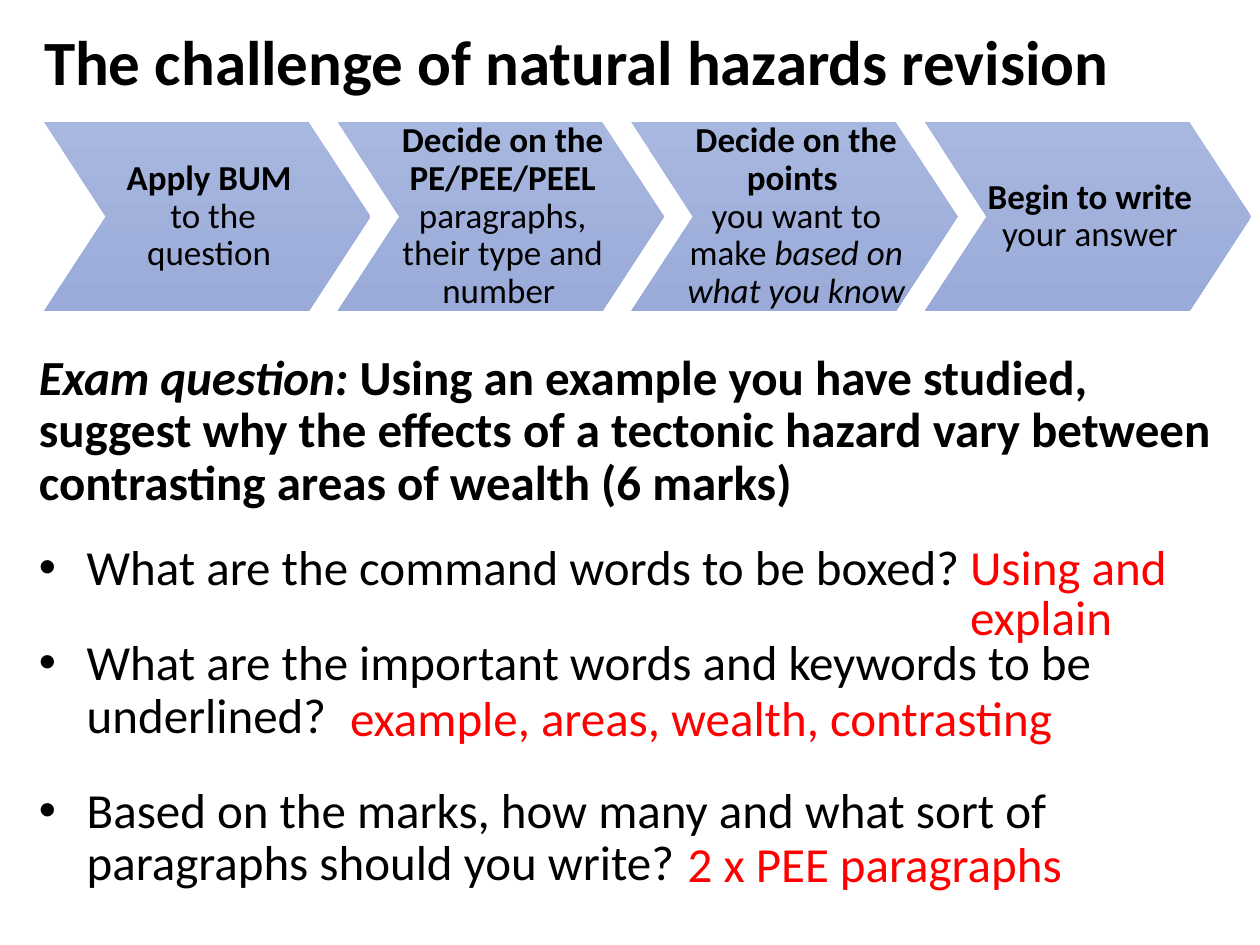
from lxml import etree
from pptx import Presentation
from pptx.dml.color import RGBColor
from pptx.enum.text import MSO_ANCHOR, MSO_AUTO_SIZE, PP_ALIGN
from pptx.oxml.ns import qn
from pptx.util import Inches, Pt

BLACK = RGBColor(0x00, 0x00, 0x00)
RED = RGBColor(0xFF, 0x00, 0x00)
BLUE_TOP = RGBColor(0xA8, 0xB7, 0xDF)
BLUE_BOTTOM = RGBColor(0x9A, 0xAB, 0xD9)

PLAIN = {"bold": False, "italic": False}
BOLD = {"bold": True, "italic": False}
ITALIC = {"bold": False, "italic": True}
BOLD_ITALIC = {"bold": True, "italic": True}


def set_frame(tf, **values):
    defaults = {"word_wrap": True, "auto_size": MSO_AUTO_SIZE.NONE}
    for name, value in {**defaults, **values}.items():
        setattr(tf, name, value)


def add_paragraph(tf, runs, size, color=BLACK, **values):
    p = tf.paragraphs[0] if not tf.paragraphs[0].runs else tf.add_paragraph()
    for name, value in values.items():
        setattr(p, name, value)
    for text, style in runs:
        r = p.add_run()
        r.text = text
        r.font.color.rgb = color
        for name, value in {"name": "Calibri", "size": Pt(size), **style}.items():
            setattr(r.font, name, value)
    return p


prs = Presentation()
prs.slide_width, prs.slide_height = Inches(10), Inches(7.5)
s = prs.slides.add_slide(prs.slide_layouts[5])

title = s.shapes.title
title.left, title.top = Inches(0.25), Inches(0.17)
title.width, title.height = Inches(9.5), Inches(0.67)
set_frame(title.text_frame, vertical_anchor=MSO_ANCHOR.BOTTOM)
add_paragraph(title.text_frame, [("The challenge of natural hazards revision", BOLD)], 36,
              alignment=PP_ALIGN.LEFT, line_spacing=0.9)

body = s.shapes.add_textbox(Inches(0.21), Inches(2.75), Inches(9.79), Inches(4.5))
set_frame(body.text_frame)
add_paragraph(body.text_frame, [
    ("Exam question: ", BOLD_ITALIC),
    ("Using an example you have studied, suggest why the effects of a tectonic hazard "
     "vary between contrasting areas of wealth (6 marks)", BOLD),
], 28, line_spacing=0.9, space_before=Pt(12), space_after=Pt(6))

questions = [
    "What are the command words to be boxed?",
    "What are the important words and keywords to be underlined?",
    "Based on the marks, how many and what sort of paragraphs should you write?",
]
for question in questions:
    p = add_paragraph(body.text_frame, [(question, PLAIN)], 28, line_spacing=0.9,
                      space_before=Pt(12), space_after=Pt(12))
    pPr = p._p.get_or_add_pPr()
    pPr.set("marL", str(Inches(0.38)))
    pPr.set("indent", str(-Inches(0.38)))
    etree.SubElement(pPr, qn("a:buFont")).set("typeface", "Arial")
    etree.SubElement(pPr, qn("a:buChar")).set("char", "•")

steps = [
    [[("Apply BUM", BOLD)], [(" to the question", PLAIN)]],
    [[("Decide on the PE/PEE/PEEL", BOLD), (" paragraphs, their type and number ", PLAIN)]],
    [[("Decide on the points ", BOLD)],
     [("you want to make ", PLAIN), ("based on what you know ", ITALIC)]],
    [[("Begin to write", BOLD), (" your answer", PLAIN)]],
]
width, height, point = Inches(2.59), Inches(1.5), Inches(0.49)
outline = [(width - point, 0), (width, height // 2), (width - point, height),
           (0, height), (point, height // 2)]
for i, paragraphs in enumerate(steps):
    builder = s.shapes.build_freeform(0, 0)
    builder.add_line_segments(outline, close=True)
    sp = builder.convert_to_shape(Inches(0.35 + 2.33 * i), Inches(0.97))
    sp.shadow.inherit = False
    sp.line.fill.background()
    sp.fill.gradient()
    sp.fill.gradient_angle = 270
    for stop, color, position in zip(sp.fill.gradient_stops, (BLUE_TOP, BLUE_BOTTOM), (0, 1)):
        stop.color.rgb = color
        stop.position = position
    set_frame(sp.text_frame, vertical_anchor=MSO_ANCHOR.MIDDLE,
              margin_left=Inches(0.42), margin_right=Inches(0.39),
              margin_top=Inches(0.02), margin_bottom=Inches(0.02))
    for runs in paragraphs:
        add_paragraph(sp.text_frame, runs, 20, alignment=PP_ALIGN.CENTER, line_spacing=0.9)

answers = [
    ("Using and explain", 7.6, 4.28, 2.31, 0.9),
    ("example, areas, wealth, contrasting", 2.68, 5.48, 7.32, 0.5),
    ("2 x PEE paragraphs", 5.36, 6.64, 3.28, 0.5),
]
for text, *box in answers:
    sp = s.shapes.add_textbox(*map(Inches, box))
    set_frame(sp.text_frame)
    add_paragraph(sp.text_frame, [(text, PLAIN)], 28, RED, line_spacing=0.85)

prs.save("out.pptx")
